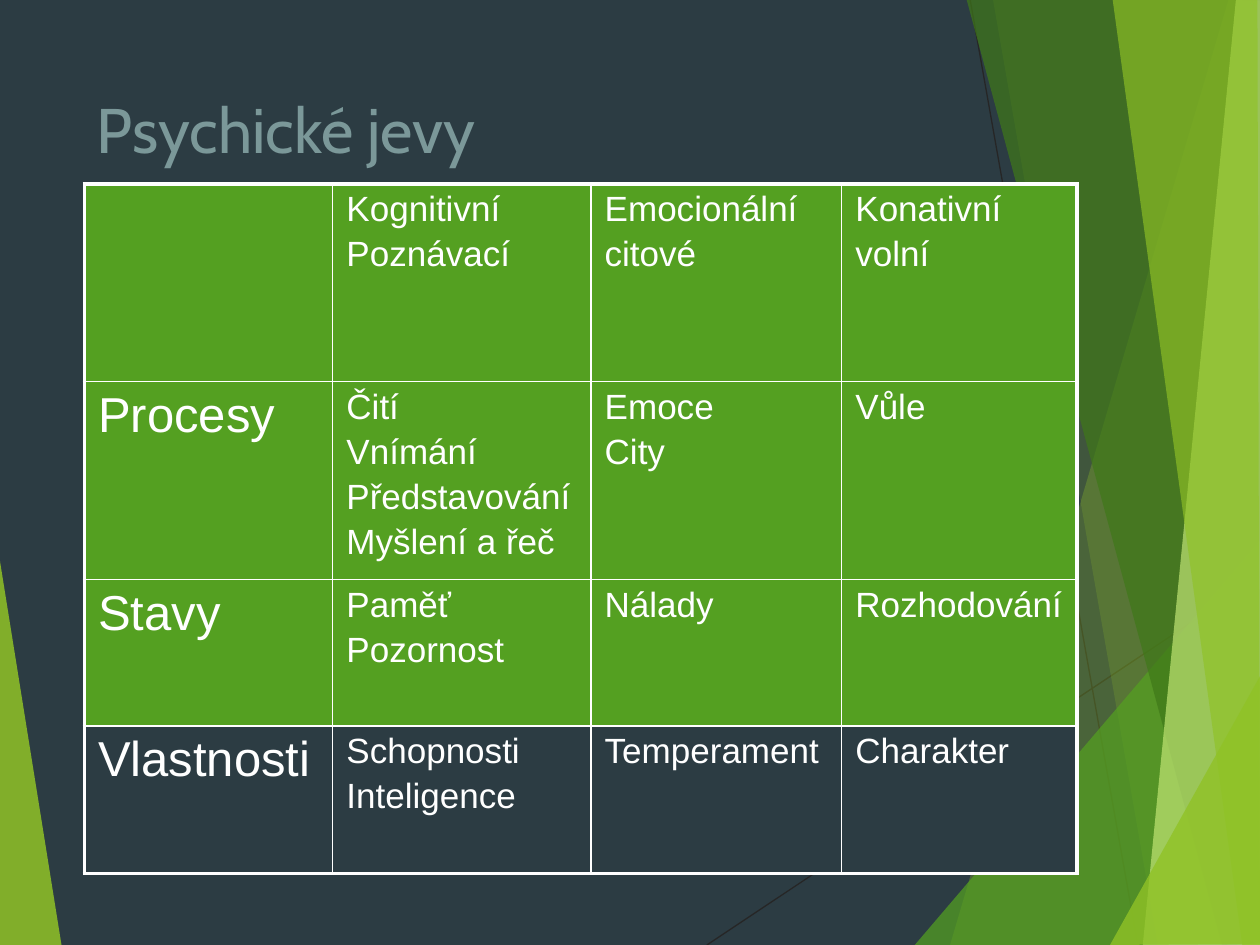
from lxml import etree
from pptx import Presentation
from pptx.dml.color import RGBColor
from pptx.enum.shapes import MSO_CONNECTOR
from pptx.enum.text import MSO_ANCHOR
from pptx.oxml.ns import qn
from pptx.util import Inches, Pt

STRAIGHT = MSO_CONNECTOR.STRAIGHT
TOP = MSO_ANCHOR.TOP
BACKGROUND, GREEN, WHITE = "2C3C43", "54A021", "FFFFFF"
LIME = "90C226"


def rgb(color):
    return RGBColor.from_string(color)


def add_solid(parent, color):
    """Append a solid fill to an XML element and return its colour element."""
    fill = etree.SubElement(parent, qn("a:solidFill"))
    return etree.SubElement(fill, qn("a:srgbClr"), val=color)


prs = Presentation()
prs.slide_width, prs.slide_height = Inches(10), Inches(7.5)
s = prs.slides.add_slide(prs.slide_layouts[6])
s.background.fill.solid()
s.background.fill.fore_color.rgb = rgb(BACKGROUND)

# Thin lines behind the facets
for ends in [(5.61, 7.5, 10.01, 4.57), (7.7, 0, 9.03, 7.5)]:
    line = s.shapes.add_connector(STRAIGHT, *[Inches(v) for v in ends])
    line.line.color.rgb = rgb("262626")
    line.line.width = Pt(0.75)
    etree.SubElement(line._element.spPr, qn("a:effectLst"))

# Translucent facets: colour, opacity in percent, corners
facets = [
    (LIME, 85, [(-0.01, 4.39), (0.49, 7.51), (-0.01, 7.5)]),
    (LIME, 30, [(9.75, 0), (7.54, 7.5), (10.02, 7.51), (10.01, 0.01)]),
    (LIME, 20, [(7.88, -0.01), (9.19, 7.5), (10.01, 7.5), (10.01, -0.01)]),
    (GREEN, 72, [(7.26, 7.5), (10, 4.29), (10.01, 7.5)]),
    ("3F7819", 70, [(7.67, -0.01), (9.7, 7.5), (10.01, 7.49), (10.01, -0.01)]),
    ("C0E474", 70, [(9.81, -0.01), (9.07, 7.5), (10.01, 7.5), (10, -0.01)]),
    (LIME, 65, [(8.83, -0.01), (9.86, 7.5), (10, 7.5), (9.98, -0.01)]),
    (LIME, 80, [(8.81, 7.5), (10.01, 5.35), (10.01, 7.49)]),
]
for color, opacity, corners in facets:
    points = [(Inches(x), Inches(y)) for x, y in corners]
    builder = s.shapes.build_freeform(*points[0])
    builder.add_line_segments(points[1:], close=True)
    facet = builder.convert_to_shape()
    facet.shadow.inherit = False
    facet.line.fill.background()
    facet.fill.solid()
    facet.fill.fore_color.rgb = rgb(color)
    clr = facet._element.spPr.find(qn("a:solidFill"))[0]
    etree.SubElement(clr, qn("a:alpha"), val=str(opacity * 1000))

# Title
title = s.shapes.add_textbox(Inches(0.67), Inches(0.67), Inches(6.94), Inches(1.44))
tf = title.text_frame
tf.word_wrap = True
tf.vertical_anchor = TOP
r = tf.paragraphs[0].add_run()
r.text = "Psychické jevy"
r.font.name, r.font.size = "Cabin", Pt(36)
r.font.color.rgb = rgb("7B9899")

# Table
rows = [
    [[], ["Kognitivní", "Poznávací"], ["Emocionální", "citové"], ["Konativní", "volní"]],
    [["Procesy"], ["Čití", "Vnímání", "Představování", "Myšlení a řeč"],
     ["Emoce", "City"], ["Vůle"]],
    [["Stavy"], ["Paměť", "Pozornost"], ["Nálady"], ["Rozhodování"]],
    [["Vlastnosti"], ["Schopnosti", "Inteligence"], ["Temperament"], ["Charakter"]],
]
col_widths = [1.97, 2.05, 1.99, 1.87]
row_heights = [1.57, 1.46, 1.16, 1.17]
last_row, last_col = len(row_heights) - 1, len(col_widths) - 1
table = s.shapes.add_table(len(row_heights), len(col_widths), Inches(0.67), Inches(1.46),
                           Inches(sum(col_widths)), Inches(sum(row_heights))).table
for column, width in zip(table.columns, col_widths):
    column.width = Inches(width)
for row, height in zip(table.rows, row_heights):
    row.height = Inches(height)

for i, row in enumerate(rows):
    for j, words in enumerate(row):
        cell = table.cell(i, j)
        cell.margin_left = cell.margin_right = Inches(0.11)
        cell.margin_top = cell.margin_bottom = Inches(0.05)
        outer = {"L": j == 0, "R": j == last_col, "T": i == 0, "B": i == last_row}
        for side, is_outer in outer.items():
            width = Pt(2.25 if is_outer else 1)
            border = etree.SubElement(cell._tc.get_or_add_tcPr(), qn(f"a:ln{side}"),
                                      w=str(width))
            add_solid(border, WHITE)
        cell.fill.solid()
        cell.fill.fore_color.rgb = rgb(BACKGROUND if i == last_row else GREEN)
        tf = cell.text_frame
        for n, word in enumerate(words):
            p = tf.add_paragraph() if n else tf.paragraphs[0]
            if n:
                p.space_before = Pt(3.3)
            r = p.add_run()
            r.text = word
            r.font.name, r.font.size = "Arial", Pt(20 if j else 28)
            r.font.bold = False
            r.font.color.rgb = rgb(WHITE)

prs.save("out.pptx")
